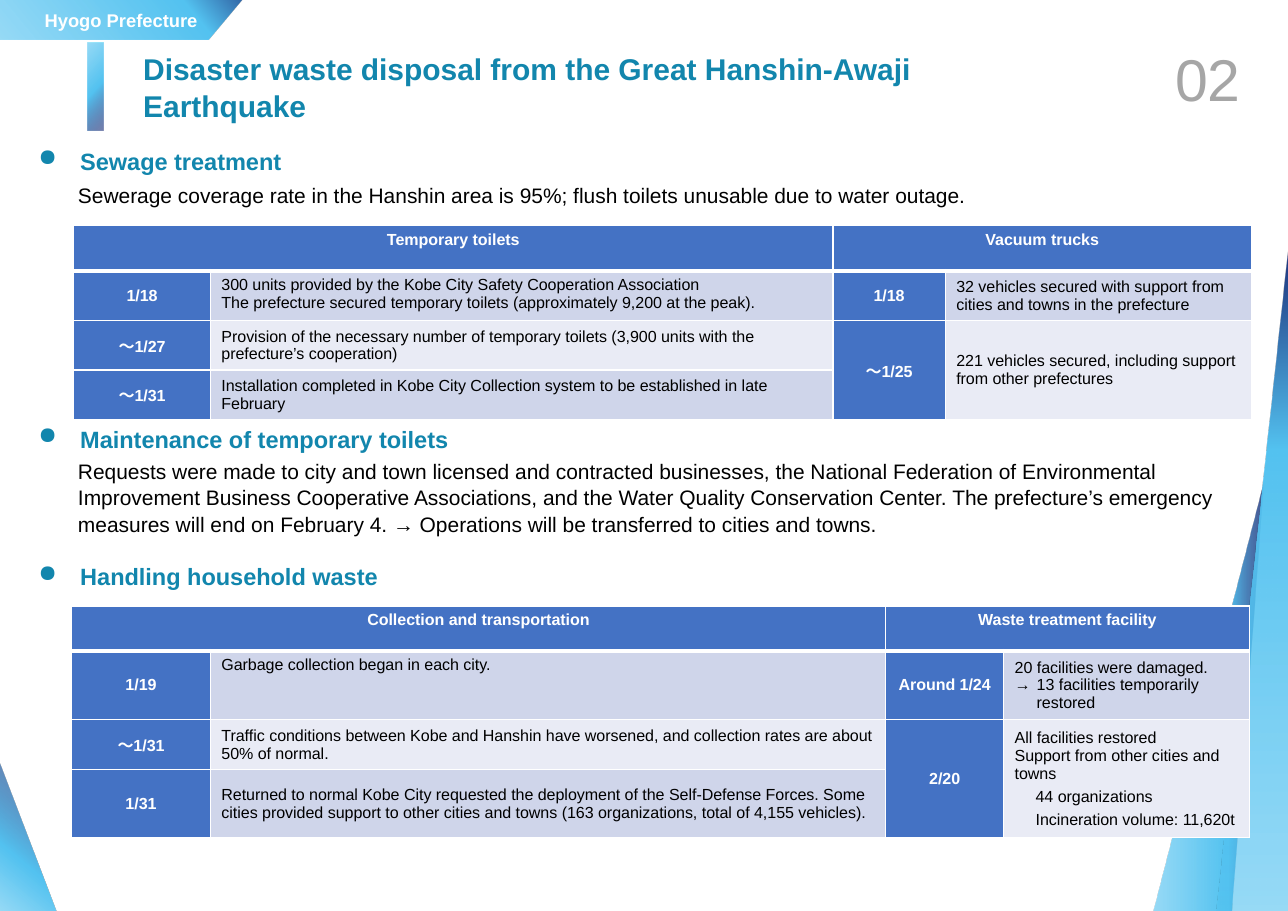
from lxml.etree import SubElement
from pptx import Presentation
from pptx.dml.color import RGBColor
from pptx.enum.shapes import MSO_SHAPE
from pptx.enum.text import MSO_ANCHOR, PP_ALIGN
from pptx.oxml import parse_xml
from pptx.oxml.ns import nsdecls, qn
from pptx.util import Inches, Pt

TEAL, SKY, NAVY = "1286AD", "54C3F1", "1C2B76"
BLUE, WHITE, BLACK, GREY = "4472C4", "FFFFFF", "000000", "A6A6A6"
BANDS = ("CFD5EA", "E9EBF5")

TOILETS = [
    ["1/18", ["300 units provided by the Kobe City Safety Cooperation Association\v"
              "The prefecture secured temporary toilets (approximately 9,200 at the peak)."],
     "1/18", ["32 vehicles secured with support from cities and towns in the prefecture"]],
    ["～1/27", ["Provision of the necessary number of temporary toilets (3,900 units with the "
               "prefecture’s cooperation)"],
     "～1/25", ["221 vehicles secured, including support from other prefectures"]],
    ["～1/31", ["Installation completed in Kobe City Collection system to be established in late February"]],
]
WASTE = [
    ["1/19", ["Garbage collection began in each city."],
     "Around 1/24", ["20 facilities were damaged.",
                     ("→\t13 facilities temporarily restored", 0.2, -0.2, 0)]],
    ["～1/31", ["Traffic conditions between Kobe and Hanshin have worsened, and collection rates "
               "are about 50% of normal."],
     "2/20", ["All facilities restored", "Support from other cities and towns",
              ("44 organizations", 0.19, 0, 3.5), ("Incineration volume: 11,620t", 0.19, 0, 3.5)]],
    ["1/31", ["Returned to normal Kobe City requested the deployment of the Self-Defense Forces. "
              "Some cities provided support to other cities and towns (163 organizations, total of "
              "4,155 vehicles)."]],
]


def rgb(value):
    """Turn a hex string into a colour."""
    return RGBColor.from_string(value)


def style(p, size, color, bold=False, align=PP_ALIGN.LEFT):
    """Set the font and alignment of a paragraph."""
    p.alignment = align
    p.font.name, p.font.size, p.font.bold = "Arial", Pt(size), bold
    p.font.color.rgb = rgb(color)


def indent(p, left, first):
    """Set the left and first-line indents of a paragraph."""
    pPr = p._p.get_or_add_pPr()
    pPr.set("marL", str(Inches(left)))
    pPr.set("indent", str(Inches(first)))
    return pPr


def gradient(sp, angle, *stops):
    """Fill a shape with a gradient of (position, colour, opacity) stops."""
    sp.shadow.inherit = False
    sp.line.fill.background()
    gs = "".join(f'<a:gs pos="{pos * 1000}"><a:srgbClr val="{color}">'
                 f'<a:alpha val="{alpha * 1000}"/></a:srgbClr></a:gs>' for pos, color, alpha in stops)
    fill = parse_xml(f'<a:gradFill {nsdecls("a")} rotWithShape="1"><a:gsLst>{gs}</a:gsLst>'
                     f'<a:lin ang="{angle * 60000}" scaled="0"/></a:gradFill>')
    sp._element.spPr.find(qn("a:ln")).addprevious(fill)


def add_polygon(s, points):
    """Add a closed outline through points given in inches."""
    start, *rest = [(Inches(x), Inches(y)) for x, y in points]
    builder = s.shapes.build_freeform(*start)
    builder.add_line_segments(rest, close=True)
    return builder.convert_to_shape()


def add_preset(s, kind, *box):
    """Add a preset shape in a box given in inches."""
    return s.shapes.add_shape(kind, *map(Inches, box))


def add_text(s, box, text, size, color, bold=False, align=PP_ALIGN.LEFT, anchor=MSO_ANCHOR.TOP,
             spacing=1.05):
    """Add a wrapped text box with one paragraph."""
    tf = s.shapes.add_textbox(*map(Inches, box)).text_frame
    tf.word_wrap, tf.vertical_anchor = True, anchor
    p = tf.paragraphs[0]
    p.text, p.line_spacing = text, spacing
    style(p, size, color, bold, align)
    return tf


def add_decoration(s, width, height):
    """Draw the corner banner and the coloured wedges at the slide edges."""
    banner = add_polygon(s, [(0, 0), (2.2, 0), (1.89, 0.36), (0, 0.36)])
    gradient(banner, 320, (0, SKY, 60), (78, SKY, 100), (99, "336AA9", 100), (100, NAVY, 62))
    tf = banner.text_frame
    tf.vertical_anchor = MSO_ANCHOR.MIDDLE
    tf.paragraphs[0].text = "Hyogo Prefecture"
    style(tf.paragraphs[0], 12, WHITE, True, PP_ALIGN.CENTER)
    left = add_preset(s, MSO_SHAPE.RIGHT_TRIANGLE, 0, height - 1.34, 0.51, 1.34)
    gradient(left, 310, (0, SKY, 60), (35, SKY, 100), (100, NAVY, 60))
    wedge = add_polygon(s, [(width - 0.51, height), (width - 0.22, 4.37), (width - 1.22, height)])
    gradient(wedge, 0, (0, SKY, 60), (68, SKY, 100), (100, NAVY, 80))
    right = add_preset(s, MSO_SHAPE.RIGHT_TRIANGLE, width - 0.65, 2.2, 0.65, height - 2.2)
    right._element.spPr.find(qn("a:xfrm")).set("flipH", "1")
    gradient(right, 270, (0, SKY, 60), (69, SKY, 100), (100, NAVY, 100))


def add_header(s, x, y, title, number):
    """Place the accent bar, the title and the page number."""
    bar = add_preset(s, MSO_SHAPE.RECTANGLE, x, y, 0.14, 0.79)
    gradient(bar, 40, (0, SKY, 60), (53, SKY, 100), (100, NAVY, 60))
    tf = add_text(s, (x + 0.45, y, 7.85, 1), title, 19.6, TEAL, True)
    tf.margin_left = tf.margin_right = Inches(0.05)
    add_text(s, (x + 9.31, y + 0.1, 1.25, 0.44), number, 38.5, GREY, align=PP_ALIGN.RIGHT,
             anchor=MSO_ANCHOR.MIDDLE, spacing=1)


def add_section(s, x, y, heading, body=None, gap=0):
    """Place a bulleted heading with an optional paragraph below it."""
    tf = add_text(s, (x, y, 4.42, 0.34), heading, 15.4, TEAL, True,
                  anchor=MSO_ANCHOR.MIDDLE, spacing=0.5)
    pPr = indent(tf.paragraphs[0], 0.38, -0.38)
    bullet = parse_xml(f'<a:buChar {nsdecls("a")} char="●"/>')
    pPr.find(qn("a:defRPr")).addprevious(bullet)
    if body:
        add_text(s, (x + 0.36, y + gap, 10.7, 0.76), body, 13.7, BLACK)


def fill_cell(cell, lines, color, fill, bold=False, align=PP_ALIGN.LEFT, anchor=MSO_ANCHOR.MIDDLE):
    """Write lines, plain or as (text, left, first, space before), into a cell."""
    cell.fill.solid()
    cell.fill.fore_color.rgb = rgb(fill)
    cell.vertical_anchor = anchor
    tf = cell.text_frame
    for i, line in enumerate(lines):
        text, left, first, before = (line, 0, 0, 0) if isinstance(line, str) else line
        p = tf.add_paragraph() if i else tf.paragraphs[0]
        p.text = text
        indent(p, left, first)
        p.space_before = Pt(before)
        style(p, 10.5, color, bold, align)


def add_borders(cell, row):
    """Draw white borders, thicker between the header and the first row."""
    tcPr = cell._tc.get_or_add_tcPr()
    for side in "LRTB":
        thick = (row, side) in ((0, "B"), (1, "T"))
        ln = SubElement(tcPr, qn(f"a:ln{side}"), w=str(Pt(3 if thick else 1)))
        SubElement(SubElement(ln, qn("a:solidFill")), qn("a:srgbClr"), val=WHITE)


def add_schedule(s, x, y, widths, heights, titles, rows):
    """Add a table of two date and event column pairs under merged titles."""
    frame = s.shapes.add_table(len(heights), len(widths), Inches(x), Inches(y),
                               Inches(sum(widths)), Inches(sum(heights)))
    table = frame.table
    table.first_row = table.horz_banding = False
    for column, width in zip(table.columns, widths):
        column.width = Inches(width)
    for i, height in enumerate(heights):
        table.rows[i].height = Inches(height)
        for j in range(len(widths)):
            add_borders(table.cell(i, j), i)
    for j, title in zip((0, 2), titles):
        table.cell(0, j).merge(table.cell(0, j + 1))
        fill_cell(table.cell(0, j), [title], WHITE, BLUE, True, PP_ALIGN.CENTER, MSO_ANCHOR.TOP)
    for j in (2, 3):
        table.cell(2, j).merge(table.cell(3, j))
    for i, row in enumerate(rows, 1):
        for j, content in enumerate(row):
            cell = table.cell(i, j)
            if j % 2 == 0:
                fill_cell(cell, [content], WHITE, BLUE, True, PP_ALIGN.CENTER)
            else:
                anchor = MSO_ANCHOR.TOP if (i, j) == (1, 1) else MSO_ANCHOR.MIDDLE
                fill_cell(cell, content, BLACK, BANDS[(i - 1) % 2], anchor=anchor)


def main():
    """Build the slide and save it."""
    prs = Presentation()
    prs.slide_width, prs.slide_height = Inches(11.69), Inches(8.27)
    s = prs.slides.add_slide(prs.slide_layouts[6])
    add_decoration(s, 11.69, 8.27)
    add_header(s, 0.8, 0.39, "Disaster waste disposal from the Great Hanshin-Awaji Earthquake", "02")
    add_section(s, 0.25, 1.34, "Sewage treatment",
                "Sewerage coverage rate in the Hanshin area is 95%; flush toilets unusable due to "
                "water outage.", 0.26)
    add_schedule(s, 0.67, 2.05, (1.24, 5.65, 1.02, 2.78), (0.41, 0.42, 0.42, 0.42),
                 ("Temporary toilets", "Vacuum trucks"), TOILETS)
    add_section(s, 0.25, 3.86, "Maintenance of temporary toilets",
                "Requests were made to city and town licensed and contracted businesses, the National "
                "Federation of Environmental Improvement Business Cooperative Associations, and the "
                "Water Quality Conservation Center. The prefecture’s emergency measures will end on "
                "February 4. → Operations will be transferred to cities and towns.", 0.24)
    add_section(s, 0.25, 5.11, "Handling household waste")
    add_schedule(s, 0.65, 5.5, (1.26, 6.13, 1.07, 2.23), (0.41, 0.58, 0.42, 0.58),
                 ("Collection and transportation", "Waste treatment facility"), WASTE)
    prs.save("out.pptx")


if __name__ == "__main__":
    main()
